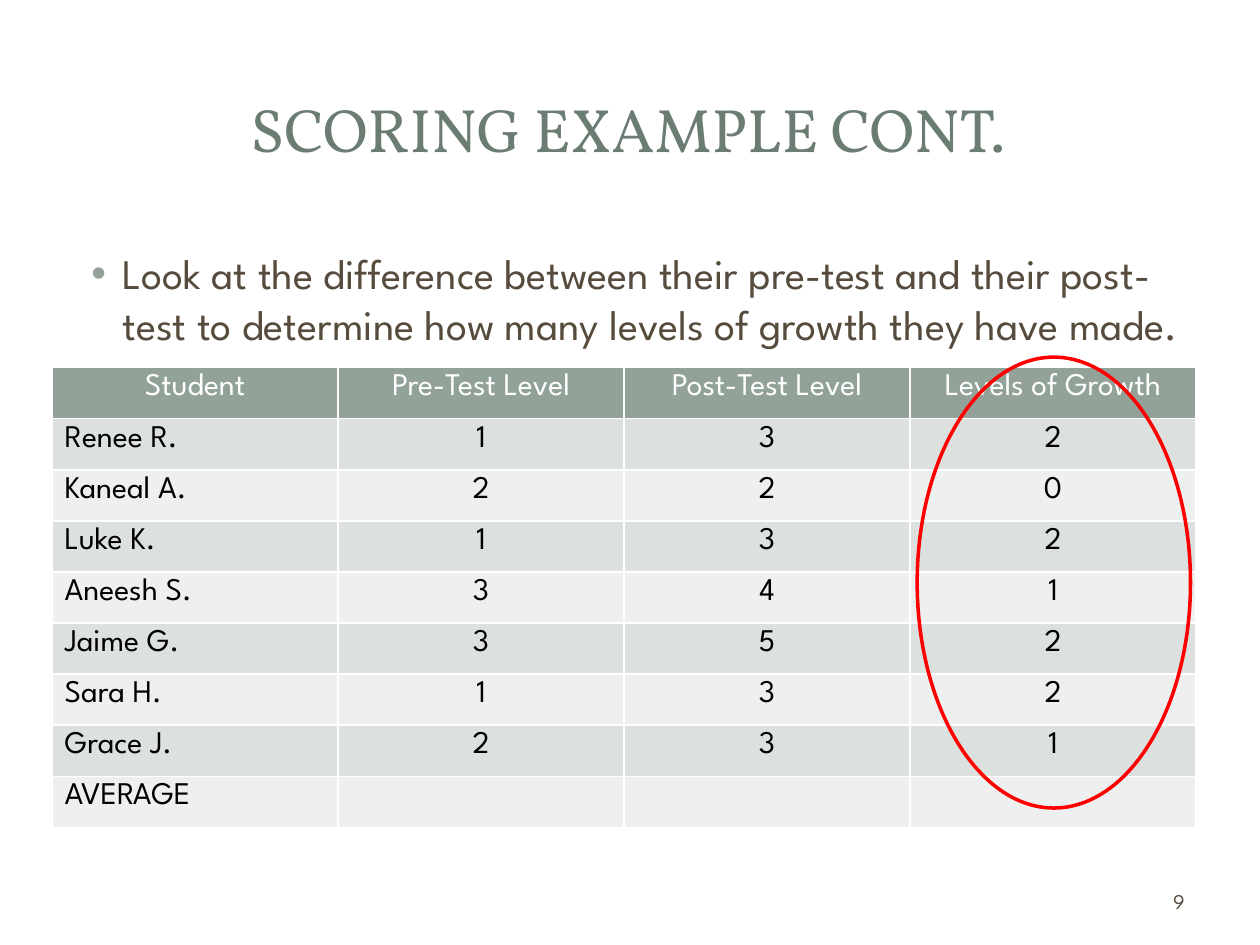
from lxml import etree
from pptx import Presentation
from pptx.dml.color import RGBColor as RGB
from pptx.enum.shapes import MSO_SHAPE as Shape
from pptx.enum.text import MSO_ANCHOR as Anchor, MSO_AUTO_SIZE as Auto, PP_ALIGN as Align
from pptx.oxml.ns import qn
from pptx.util import Cm, Pt

TITLE = "SCORING EXAMPLE CONT."
BODY = ("Look at the difference between their pre-test and their post-test "
        "to determine how many levels of growth they have made.")
PAGE = "9"
HEADER = ("Student", "Pre-Test Level", "Post-Test Level", "Levels of Growth")
SCORES = [
    ("Renee R.", 1, 3, 2),
    ("Kaneal A.", 2, 2, 0),
    ("Luke K.", 1, 3, 2),
    ("Aneesh S.", 3, 4, 1),
    ("Jaime G.", 3, 5, 2),
    ("Sara H.", 1, 3, 2),
    ("Grace J.", 2, 3, 1),
    ("AVERAGE", "", "", ""),
]
PANELS = [
    (Shape.ROUNDED_RECTANGLE, (0.25, 0.28, 24.89, 18.8), 100),
    (Shape.RECTANGLE, (0.76, 0.76, 23.88, 3.68), 83),
    (Shape.RECTANGLE, (1.04, 1.04, 23.29, 3.1), 100),
]
COLORS = {"title": "6B7D72", "text": "564B3C", "accent": "93A299", "dark": "DCE0DE",
          "light": "EEF0EF", "white": "FFFFFF", "black": "000000", "ring": "FF0000"}


def color(name):
    """Return the named colour."""
    return RGB.from_string(COLORS[name])


def write(tf, text, size=18, font="League Spartan", fill="text", align=Align.LEFT,
          anchor=Anchor.TOP):
    """Put one formatted paragraph in a text frame and return it."""
    tf.vertical_anchor = anchor
    p = tf.paragraphs[0]
    p.alignment = align
    r = p.add_run()
    r.text = text
    r.font.size, r.font.name, r.font.bold = Pt(size), font, False
    r.font.color.rgb = color(fill)
    return p


def place(sp, left, top, width, height):
    """Move and size a shape in centimetres and fix its text size."""
    sp.left, sp.top, sp.width, sp.height = map(Cm, (left, top, width, height))
    sp.text_frame.word_wrap = True
    sp.text_frame.auto_size = Auto.NONE
    return sp.text_frame


def add_bullet(p):
    """Give a paragraph a coloured hanging bullet."""
    pPr = p._p.get_or_add_pPr()
    pPr.set("marL", str(Cm(0.95)))
    pPr.set("indent", str(Cm(-0.63)))
    clr = etree.SubElement(pPr, qn("a:buClr"))
    etree.SubElement(clr, qn("a:srgbClr"), val=COLORS["accent"])
    etree.SubElement(pPr, qn("a:buFont"), typeface="Arial")
    etree.SubElement(pPr, qn("a:buChar"), char="•")


def add_panels(s):
    """Add the white panels behind the placeholders."""
    for i, (kind, box, opacity) in enumerate(PANELS):
        sp = s.shapes.add_shape(kind, *map(Cm, box))
        sp.shadow.inherit = False
        sp.fill.solid()
        sp.fill.fore_color.rgb = color("white")
        sp.line.fill.background()
        if kind == Shape.ROUNDED_RECTANGLE:
            sp.adjustments[0] = 0.02
        if opacity < 100:
            clr = sp._element.spPr.find(qn("a:solidFill")).find(qn("a:srgbClr"))
            etree.SubElement(clr, qn("a:alpha"), val=str(opacity * 1000))
        s.shapes._spTree.insert(2 + i, sp._element)


def add_scores(s):
    """Add the banded table of student scores."""
    rows = [HEADER, *SCORES]
    table = s.shapes.add_table(len(rows), len(HEADER), Cm(1.05), Cm(7.41),
                               Cm(23.06), Cm(9.27)).table
    for i, row in enumerate(rows):
        fill = "accent" if i == 0 else ("light", "dark")[i % 2]
        for j, value in enumerate(row):
            cell = table.cell(i, j)
            cell.fill.solid()
            cell.fill.fore_color.rgb = color(fill)
            write(cell.text_frame, str(value), fill="black" if i else "white",
                  align=Align.LEFT if i and j == 0 else Align.CENTER)


def main():
    """Build the scoring slide."""
    prs = Presentation()
    prs.slide_width, prs.slide_height = Cm(25.4), Cm(19.05)
    s = prs.slides.add_slide(prs.slide_layouts[1])
    title, body = s.placeholders
    add_panels(s)
    write(place(title, 1.19, 1.14, 22.94, 2.9), TITLE, size=35, font="Vollkorn",
          fill="title", align=Align.CENTER, anchor=Anchor.MIDDLE)
    add_bullet(write(place(body, 1.27, 4.87, 22.86, 12.14), BODY, size=24))
    number = s.shapes.add_textbox(0, 0, 0, 0)
    write(place(number, 18.21, 17.65, 5.92, 1.02), PAGE, size=12,
          align=Align.RIGHT, anchor=Anchor.MIDDLE)
    add_scores(s)
    ring = s.shapes.add_shape(Shape.OVAL, Cm(18.49), Cm(7.2), Cm(5.51), Cm(9.09))
    ring.shadow.inherit = False
    ring.fill.background()
    ring.line.color.rgb, ring.line.width = color("ring"), Pt(2)
    prs.save("out.pptx")


if __name__ == "__main__":
    main()
